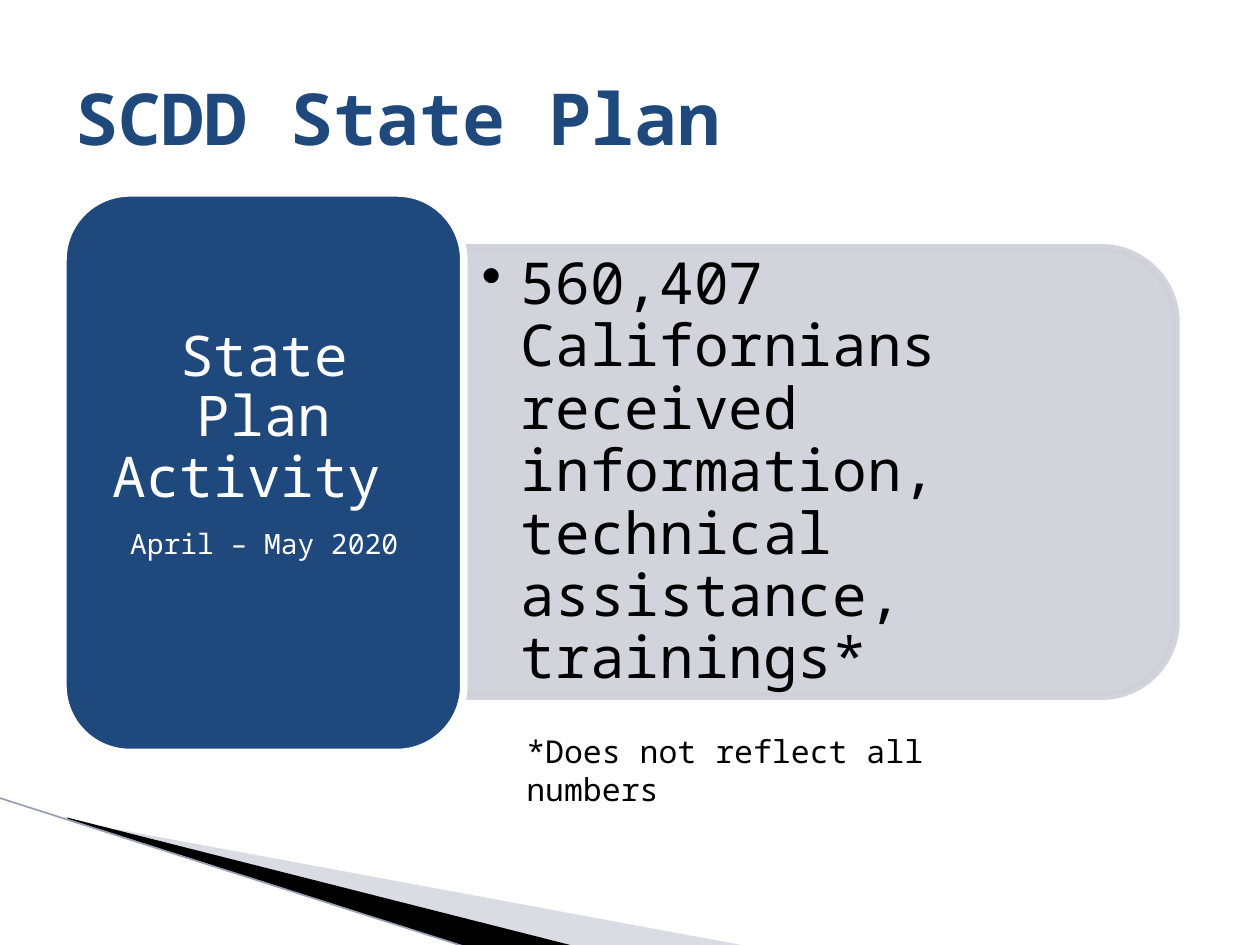
"""Build the SCDD State Plan slide."""
from dataclasses import dataclass

from lxml import etree
from pptx import Presentation
from pptx import util as u
from pptx.dml.color import RGBColor
from pptx.enum import shapes, text
from pptx.oxml import ns

COLORS = {
    "navy": "1F497D",
    "panel": "CDD0D7",
    "sweep": "A1A8BA",
    "edge": "979FB3",
    "black": "000000",
    "white": "FFFFFF",
}
FONT = "Noto Sans Mono"


@dataclass
class Line:
    """One paragraph of text."""

    words: str
    size: float
    bold: bool = False
    bullet: bool = False
    spacing: float = 1.0
    after: float = 0


@dataclass
class Label:
    """A text box with its place and insets in centimetres."""

    box: tuple[float, float, float, float]
    lines: list[Line]
    color: str = "black"
    insets: tuple[float, float, float, float] = (0.25, 0.13, 0.25, 0.13)
    align: text.PP_ALIGN = text.PP_ALIGN.LEFT
    anchor: text.MSO_ANCHOR = text.MSO_ANCHOR.MIDDLE


@dataclass
class Block:
    """A filled and outlined preset shape."""

    kind: shapes.MSO_SHAPE
    box: tuple[float, float, float, float]
    fill: str
    line: str
    rotation: float = 0
    opacity: int = 100


@dataclass
class Sweep:
    """A filled polygon with corners in centimetres."""

    points: list[tuple[float, float]]
    fill: str
    opacity: int = 100


SWEEPS = [
    Sweep([(1.4, 16.54), (15.11, 19.08), (11.58, 19.08), (1.4, 16.51)], "sweep", 40),
    Sweep([(1.35, 16.48), (11.61, 19.08), (9.45, 19.1), (1.37, 16.51)], "black"),
]
FOOTNOTE = Label((10.36, 14.63, 9.65, 1.02), [Line("*Does not reflect all numbers", 18)],
                 anchor=text.MSO_ANCHOR.TOP)
PANEL = Block(shapes.MSO_SHAPE.ROUND_2_SAME_RECTANGLE, (12.01, 2.34, 9.04, 14.35),
              "panel", "panel", 90, 90)
PANEL_TEXT = Label(
    (9.35, 5.46, 13.92, 8.15),
    [Line("560,407 Californians received information, technical assistance, trainings*",
          33, bullet=True, spacing=0.9)],
    insets=(0.36, 0.18, 0.36, 0.18),
)
CARD = Block(shapes.MSO_SHAPE.ROUNDED_RECTANGLE, (1.27, 3.89, 8.08, 11.28), "navy", "white")
CARD_TEXT = Label(
    (1.68, 4.27, 7.29, 10.49),
    [Line("State Plan Activity ", 32, spacing=0.9, after=12),
     Line("April – May 2020", 16, spacing=0.9)],
    "white", (0.33, 0.18, 0.33, 1.3), text.PP_ALIGN.CENTER,
)
TITLE = Label((1.27, 0.76, 22.86, 3.18), [Line("SCDD State Plan", 41, bold=True)], "navy")


def rgb(name: str) -> RGBColor:
    """Look up a named colour."""
    return RGBColor.from_string(COLORS[name])


def paint(fill_format, name: str, opacity: int, element) -> None:
    """Apply a solid colour with its opacity."""
    fill_format.solid()
    fill_format.fore_color.rgb = rgb(name)
    if opacity < 100:
        color = element.find(ns.qn("a:solidFill")).find(ns.qn("a:srgbClr"))
        etree.SubElement(color, ns.qn("a:alpha")).set("val", str(opacity * 1000))


def add_block(slide, block: Block) -> None:
    """Draw a preset shape."""
    shape = slide.shapes.add_shape(block.kind, *map(u.Cm, block.box))
    shape.shadow.inherit = False
    shape.rotation = block.rotation
    properties = shape._element.spPr
    paint(shape.fill, block.fill, block.opacity, properties)
    shape.line.width = u.Pt(4.33)
    paint(shape.line.fill, block.line, block.opacity, properties.find(ns.qn("a:ln")))


def add_sweep(slide, sweep: Sweep) -> None:
    """Draw a polygon without an outline."""
    start, *rest = [(u.Cm(x), u.Cm(y)) for x, y in sweep.points]
    builder = slide.shapes.build_freeform(*start)
    builder.add_line_segments(rest, close=True)
    shape = builder.convert_to_shape()
    shape.shadow.inherit = False
    paint(shape.fill, sweep.fill, sweep.opacity, shape._element.spPr)
    shape.line.fill.background()


def add_edge(slide) -> None:
    """Draw the thin line along the sweep."""
    edge = slide.shapes.add_connector(
        shapes.MSO_CONNECTOR.STRAIGHT, u.Cm(-0.03), u.Cm(16.08), u.Cm(9.42), u.Cm(19.1))
    edge.line.color.rgb = rgb("edge")
    edge.line.width = u.Pt(0.95)
    etree.SubElement(edge._element.spPr, ns.qn("a:effectLst"))


def add_bullet(paragraph) -> None:
    """Give a paragraph a hanging bullet."""
    properties = paragraph._p.get_or_add_pPr()
    properties.set("marL", str(u.Cm(0.79)))
    properties.set("indent", str(u.Cm(-0.79)))
    etree.SubElement(properties, ns.qn("a:buChar")).set("char", "•")


def add_label(slide, label: Label) -> None:
    """Draw a text box."""
    frame = slide.shapes.add_textbox(*map(u.Cm, label.box)).text_frame
    frame.word_wrap = True
    frame.vertical_anchor = label.anchor
    (frame.margin_left, frame.margin_top,
     frame.margin_right, frame.margin_bottom) = map(u.Cm, label.insets)
    frame.text = "\n".join(line.words for line in label.lines)
    for paragraph, line in zip(frame.paragraphs, label.lines):
        paragraph.alignment = label.align
        paragraph.line_spacing = line.spacing
        paragraph.space_after = u.Pt(line.after)
        if line.bullet:
            add_bullet(paragraph)
        for run in paragraph.runs:
            run.font.name = FONT
            run.font.size = u.Pt(line.size)
            run.font.bold = line.bold
            run.font.color.rgb = rgb(label.color)


def main() -> None:
    """Build and save the presentation."""
    presentation = Presentation()
    presentation.slide_width, presentation.slide_height = u.Cm(25.4), u.Cm(19.05)
    slide = presentation.slides.add_slide(presentation.slide_layouts[6])
    for sweep in SWEEPS:
        add_sweep(slide, sweep)
    add_edge(slide)
    add_label(slide, FOOTNOTE)
    for block, label in ((PANEL, PANEL_TEXT), (CARD, CARD_TEXT)):
        add_block(slide, block)
        add_label(slide, label)
    add_label(slide, TITLE)
    presentation.save("out.pptx")


if __name__ == "__main__":
    main()
